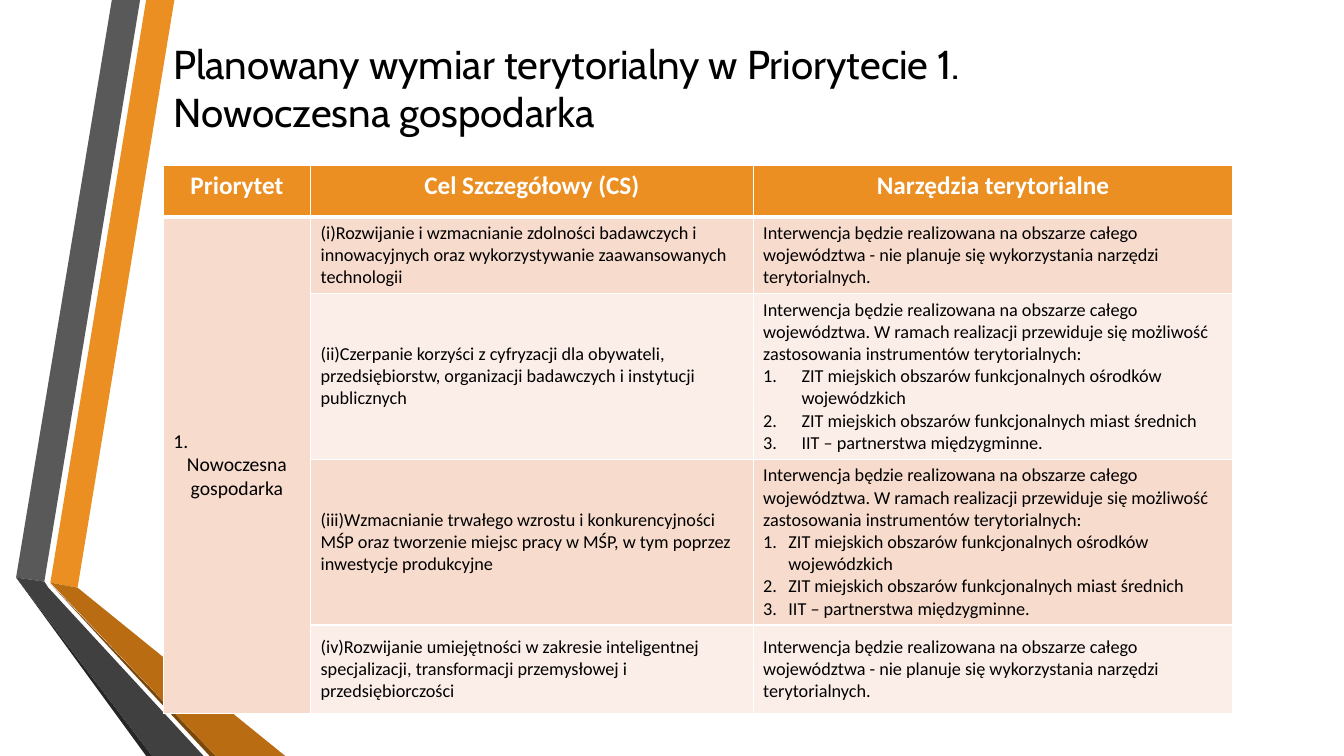
from lxml.etree import SubElement
from pptx import Presentation
from pptx.dml.color import RGBColor
from pptx.enum.text import MSO_ANCHOR, PP_ALIGN
from pptx.oxml.ns import qn
from pptx.util import Inches, Pt

THEME = {
    "orange": "EB8F22", "dark_orange": "B96C11", "brown": "7B480B",
    "gray": "595959", "dark_gray": "404040", "charcoal": "262626",
    "band_dark": "F7DBCD", "band_light": "FBEEE8",
    "white": "FFFFFF", "black": "000000",
    "title_font": "Cabin", "table_font": "Calibri",
    "title_size": 28.8, "header_size": 18, "priority_size": 14, "body_size": 13,
}


def format_text(text_frame, font_name, size, color, bold=False):
    for paragraph in text_frame.paragraphs:
        for run in paragraph.runs:
            run.font.name = THEME[font_name]
            run.font.size = Pt(THEME[size])
            run.font.color.rgb = RGBColor.from_string(THEME[color])
            run.font.bold = bold


def style_cell(cell, fill, top_width, bottom_width):
    properties = cell._tc.get_or_add_tcPr()
    for side, width in (("L", 1), ("R", 1), ("T", top_width), ("B", bottom_width)):
        line = SubElement(properties, qn(f"a:ln{side}"), w=str(Pt(width)))
        line_fill = SubElement(line, qn("a:solidFill"))
        SubElement(line_fill, qn("a:srgbClr"), val=THEME["white"])
    cell.fill.solid()
    cell.fill.fore_color.rgb = RGBColor.from_string(THEME[fill])


presentation = Presentation()
presentation.slide_width = Inches(13.33)
presentation.slide_height = Inches(7.5)
slide = presentation.slides.add_slide(presentation.slide_layouts[6])

ribbons = [
    ("orange", [(0.5, 5.78), (0.77, 5.83), (1.73, 0), (1.45, 0)]),
    ("gray", [(1.39, 0), (1.11, 0), (0.16, 5.73), (0.44, 5.77)]),
    ("charcoal", [(0.16, 5.73), (1.45, 7.5), (1.51, 7.5)]),
    ("brown", [(0.5, 5.79), (2.08, 7.5), (2.14, 7.5)]),
    ("dark_orange", [(0.5, 5.78), (2.14, 7.5), (2.83, 7.5), (0.77, 5.83)]),
    ("dark_gray", [(2.02, 7.5), (0.48, 5.83), (0.44, 5.77), (0.16, 5.73), (1.51, 7.5)]),
]
for color, points in ribbons:
    corners = [(Inches(x), Inches(y)) for x, y in points]
    builder = slide.shapes.build_freeform(*corners[0])
    builder.add_line_segments(corners[1:], close=True)
    ribbon = builder.convert_to_shape()
    ribbon.shadow.inherit = False
    ribbon.fill.solid()
    ribbon.fill.fore_color.rgb = RGBColor.from_string(THEME[color])
    ribbon.line.fill.background()

title = slide.shapes.add_textbox(Inches(1.62), Inches(0.36), Inches(11.58), Inches(1.01))
title.text_frame.word_wrap = True
title.text_frame.vertical_anchor = MSO_ANCHOR.MIDDLE
title.text_frame.paragraphs[0].text = (
    "Planowany wymiar terytorialny w Priorytecie 1. \vNowoczesna gospodarka"
)
format_text(title.text_frame, "title_font", "title_size", "black")

headers = ["Priorytet", "Cel Szczegółowy (CS)", "Narzędzia terytorialne"]
whole_region = (
    "Interwencja będzie realizowana na obszarze całego województwa"
    " - nie planuje się wykorzystania narzędzi terytorialnych."
)
with_instruments = "\n".join([
    "Interwencja będzie realizowana na obszarze całego województwa. W ramach realizacji "
    "przewiduje się możliwość zastosowania instrumentów terytorialnych:",
    "ZIT miejskich obszarów funkcjonalnych ośrodków wojewódzkich",
    "ZIT miejskich obszarów funkcjonalnych miast średnich",
    "IIT – partnerstwa międzygminne.",
])
goals = [
    ("(i)Rozwijanie i wzmacnianie zdolności badawczych i innowacyjnych oraz "
     "wykorzystywanie zaawansowanych technologii", whole_region, 0),
    ("(ii)Czerpanie korzyści z cyfryzacji dla obywateli, przedsiębiorstw, "
     "organizacji badawczych i instytucji publicznych", with_instruments, 0.38),
    ("(iii)Wzmacnianie trwałego wzrostu i konkurencyjności MŚP oraz tworzenie miejsc "
     "pracy w MŚP, w tym poprzez inwestycje produkcyjne", with_instruments, 0.25),
    ("(iv)Rozwijanie umiejętności w zakresie inteligentnej specjalizacji, "
     "transformacji przemysłowej i przedsiębiorczości", whole_region, 0),
]
column_widths = [1.46, 4.39, 4.76]
row_heights = [0.51, 0.76, 1.65, 1.64, 0.88]

table = slide.shapes.add_table(
    len(row_heights), len(column_widths), Inches(1.62), Inches(1.64),
    Inches(sum(column_widths)), Inches(sum(row_heights)),
).table
for column, width in zip(table.columns, column_widths):
    column.width = Inches(width)
for row, height in zip(table.rows, row_heights):
    row.height = Inches(height)

for column_index, header in enumerate(headers):
    cell = table.cell(0, column_index)
    style_cell(cell, "orange", 1, 3)
    cell.text_frame.text = header
    cell.text_frame.paragraphs[0].alignment = PP_ALIGN.CENTER
    format_text(cell.text_frame, "table_font", "header_size", "white", True)

for row_index, (goal, tools, indent) in enumerate(goals, start=1):
    band = "band_dark" if row_index % 2 else "band_light"
    top_width = 3 if row_index == 1 else 1
    style_cell(table.cell(row_index, 0), "band_dark", top_width, 1)
    for column_index, text in enumerate((goal, tools), start=1):
        cell = table.cell(row_index, column_index)
        style_cell(cell, band, top_width, 1)
        cell.vertical_anchor = MSO_ANCHOR.MIDDLE
        cell.text_frame.text = text
        format_text(cell.text_frame, "table_font", "body_size", "black")
        for paragraph in cell.text_frame.paragraphs[1:]:
            properties = paragraph._p.get_or_add_pPr()
            properties.set("marL", str(Inches(indent)))
            properties.set("indent", str(-Inches(indent)))
            SubElement(properties, qn("a:buFont"), typeface="+mj-lt")
            SubElement(properties, qn("a:buAutoNum"), type="arabicPeriod")

priority = table.cell(1, 0)
priority.merge(table.cell(len(goals), 0))
priority.vertical_anchor = MSO_ANCHOR.MIDDLE
priority.text_frame.text = "1.\nNowoczesna gospodarka"
priority.text_frame.paragraphs[1].alignment = PP_ALIGN.CENTER
format_text(priority.text_frame, "table_font", "priority_size", "black")

presentation.save("out.pptx")
